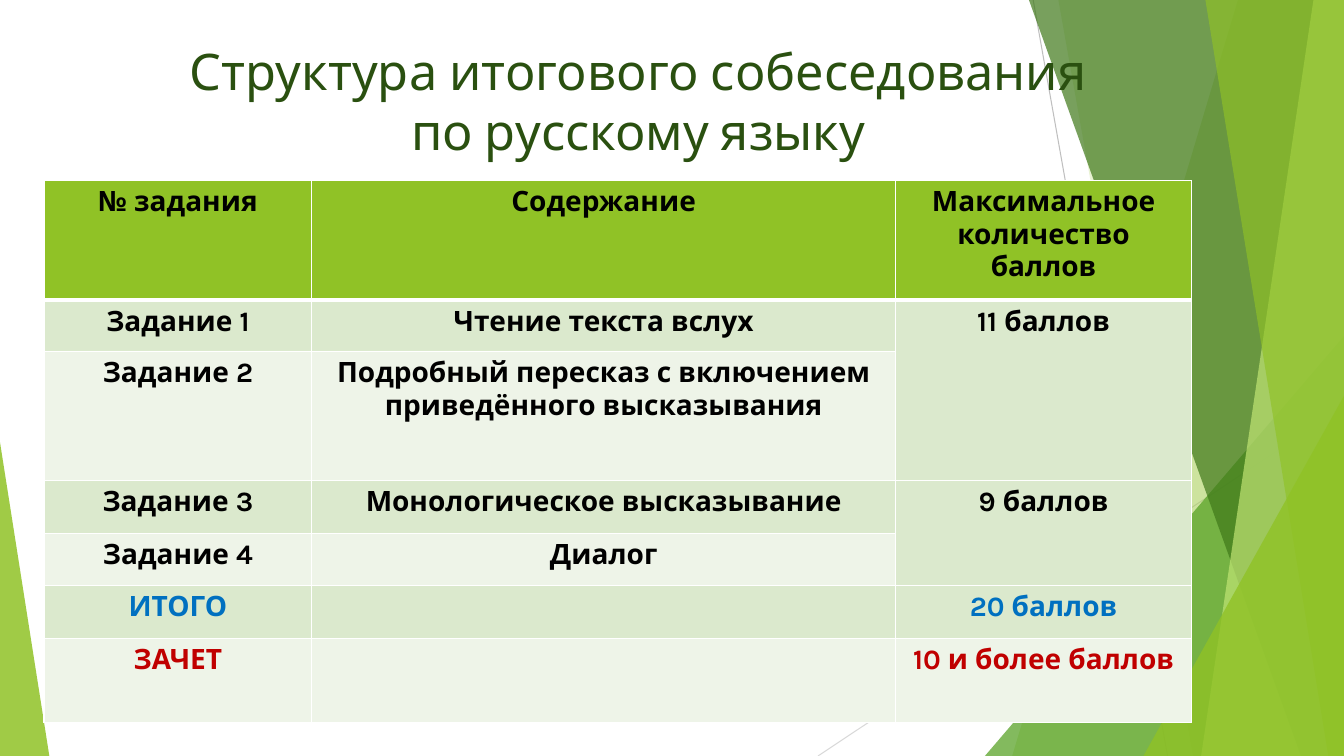
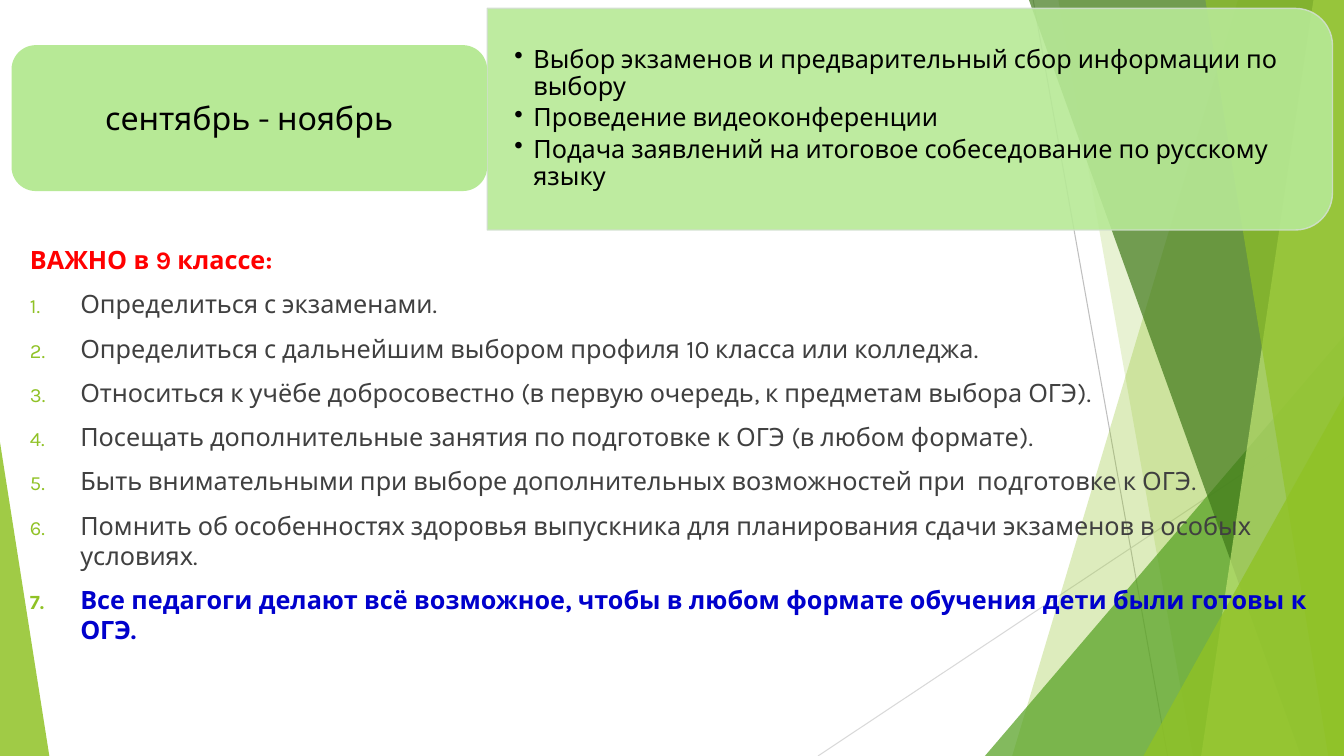
from dataclasses import dataclass
from typing import Optional, Union

from pptx import Presentation
from pptx.dml.color import RGBColor
from pptx.enum.shapes import MSO_CONNECTOR, MSO_SHAPE
from pptx.enum.text import MSO_ANCHOR, MSO_AUTO_SIZE, PP_ALIGN
from pptx.oxml.ns import qn
from pptx.oxml.xmlchemy import OxmlElement
from pptx.shapes.autoshape import Shape
from pptx.slide import Slide
from pptx.table import _Cell
from pptx.text.text import TextFrame, _Paragraph
from pptx.util import Emu, Pt

EMU_PER_PX = 9525
WIDTH, HEIGHT = 1280, 720


@dataclass(frozen=True)
class Theme:
    font: str = "Karla"
    white: str = "FFFFFF"
    black: str = "000000"
    text: str = "404040"
    title: str = "2A5010"
    lime: str = "90C226"
    grass: str = "54A021"
    forest: str = "3F7819"
    pale_lime: str = "C0E474"
    card: str = "B7E996"
    card_line: str = "D1DFCD"
    band_dark: str = "DBE9CD"
    band_light: str = "EEF4E8"
    ray_dark: str = "BFBFBF"
    ray_light: str = "D9D9D9"
    total: str = "0070C0"
    passed: str = "C00000"
    warning: str = "FF0000"
    emphasis: str = "0000CC"
    title_size: int = 36
    period_size: int = 23
    table_size: int = 20
    body_size: int = 18


THEME = Theme()


@dataclass(frozen=True)
class Box:
    left: int
    top: int
    width: int
    height: int

    def emu(self) -> tuple[Emu, ...]:
        return tuple(px(value) for value in (self.left, self.top, self.width, self.height))


@dataclass(frozen=True)
class Ray:
    start: tuple[int, int]
    end: tuple[int, int]
    color: str


@dataclass(frozen=True)
class Facet:
    top_x: int
    bottom_x: int
    color: str
    opacity: int


@dataclass(frozen=True)
class Wedge:
    box: Box
    apex: int
    color: str
    opacity: int


@dataclass(frozen=True)
class TableRow:
    height: int
    cells: tuple[Optional[str], ...]
    color: str = THEME.black


@dataclass(frozen=True)
class Advice:
    text: str
    color: str = THEME.text
    bold: bool = False


RAYS = (
    Ray((984, 0), (1112, HEIGHT), THEME.ray_dark),
    Ray((WIDTH, 387), (779, HEIGHT), THEME.ray_light),
)
BACKDROP: tuple[Union[Facet, Wedge], ...] = (
    Facet(1179, 964, THEME.lime, 30),
    Facet(1008, 1136, THEME.lime, 20),
    Wedge(Box(938, 320, 342, 400), 1, THEME.grass, 72),
    Facet(980, 1239, THEME.forest, 70),
    Facet(1251, 1144, THEME.pale_lime, 70),
    Facet(1148, 1265, THEME.lime, 65),
    Wedge(Box(1089, 377, 191, 343), 1, THEME.lime, 80),
    Wedge(Box(0, 421, 47, 299), 0, THEME.lime, 85),
)
COLUMN_WIDTHS = (255, 556, 282)
TABLE_ROWS = (
    TableRow(114, ("№ задания", "Содержание", "Максимальное количество баллов")),
    TableRow(49, ("Задание 1", "Чтение текста вслух", "11 баллов")),
    TableRow(123, ("Задание 2", "Подробный пересказ с включением приведённого высказывания", None)),
    TableRow(50, ("Задание 3", "Монологическое высказывание", "9 баллов")),
    TableRow(50, ("Задание 4", "Диалог", None)),
    TableRow(50, ("ИТОГО", "", "20 баллов"), THEME.total),
    TableRow(80, ("ЗАЧЕТ", "", "10 и более баллов"), THEME.passed),
)
AUTUMN_TASKS = (
    "Выбор экзаменов и предварительный сбор информации по выбору",
    "Проведение видеоконференции",
    "Подача заявлений на итоговое собеседование по русскому языку",
)
ADVICE_HEADING = Advice("ВАЖНО в 9 классе:", THEME.warning, True)
ADVICE = (
    Advice("Определиться с экзаменами."),
    Advice("Определиться с дальнейшим выбором профиля 10 класса или колледжа."),
    Advice("Относиться к учёбе добросовестно (в первую очередь, к предметам выбора ОГЭ)."),
    Advice("Посещать дополнительные занятия по подготовке к ОГЭ (в любом формате)."),
    Advice("Быть внимательными при выборе дополнительных возможностей при  подготовке к ОГЭ."),
    Advice("Помнить об особенностях здоровья выпускника для планирования сдачи экзаменов в особых условиях."),
    Advice("Все педагоги делают всё возможное, чтобы в любом формате обучения дети были готовы к ОГЭ.",
           THEME.emphasis, True),
)


def px(value: int) -> Emu:
    return Emu(value * EMU_PER_PX)


def rgb(color: str) -> RGBColor:
    return RGBColor.from_string(color)


def add_child(parent, tag: str, **attributes: str):
    child = OxmlElement(tag)
    for name, value in attributes.items():
        child.set(name, value)
    parent.append(child)
    return child


def paint(shape: Shape, color: str, opacity: int = 100, line: Optional[str] = None) -> None:
    shape.shadow.inherit = False
    shape.fill.solid()
    shape.fill.fore_color.rgb = rgb(color)
    if line:
        shape.line.color.rgb = rgb(line)
        shape.line.width = Pt(1)
    else:
        shape.line.fill.background()
    if opacity < 100:
        for paint_color in shape._element.spPr.iter(qn("a:srgbClr")):
            add_child(paint_color, "a:alpha", val=str(opacity * 1000))


def style(paragraph: _Paragraph, size: int, color: str, bold: bool = False) -> None:
    paragraph.font.name = THEME.font
    paragraph.font.size = Pt(size)
    paragraph.font.bold = bold
    paragraph.font.color.rgb = rgb(color)


def next_paragraph(frame: TextFrame, index: int) -> _Paragraph:
    return frame.add_paragraph() if index else frame.paragraphs[0]


def indent(paragraph: _Paragraph, hanging: int):
    properties = paragraph._p.get_or_add_pPr()
    properties.set("marL", str(px(hanging)))
    properties.set("indent", str(-px(hanging)))
    return properties


def add_text_frame(slide: Slide, box: Box) -> TextFrame:
    frame = slide.shapes.add_textbox(*box.emu()).text_frame
    frame.word_wrap = True
    return frame


def draw_backdrop(slide: Slide) -> None:
    for ray in RAYS:
        points = [px(value) for value in ray.start + ray.end]
        connector = slide.shapes.add_connector(MSO_CONNECTOR.STRAIGHT, *points)
        connector.line.color.rgb = rgb(ray.color)
        connector.line.width = Pt(0.75)
        add_child(connector._element.spPr, "a:effectLst")
    for part in BACKDROP:
        if isinstance(part, Facet):
            builder = slide.shapes.build_freeform(part.top_x, 0, scale=EMU_PER_PX)
            builder.add_line_segments([(WIDTH, 0), (WIDTH, HEIGHT), (part.bottom_x, HEIGHT)])
            shape = builder.convert_to_shape()
        else:
            shape = slide.shapes.add_shape(MSO_SHAPE.ISOSCELES_TRIANGLE, *part.box.emu())
            shape.adjustments[0] = part.apex
        paint(shape, part.color, part.opacity)


def place_title(slide: Slide, text: str, box: Box) -> None:
    title = slide.shapes.title
    title.left, title.top, title.width, title.height = box.emu()
    slide.shapes._spTree.append(title._element)
    frame = title.text_frame
    frame.text = text
    frame.word_wrap = True
    frame.auto_size = MSO_AUTO_SIZE.NONE
    frame.vertical_anchor = MSO_ANCHOR.TOP
    frame.paragraphs[0].alignment = PP_ALIGN.CENTER
    style(frame.paragraphs[0], THEME.title_size, THEME.title)


def draw_borders(cell: _Cell, row: int) -> None:
    properties = cell._tc.get_or_add_tcPr()
    widths = {"L": 1, "R": 1, "T": 3 if row == 1 else 1, "B": 3 if row == 0 else 1}
    for position, (side, width) in enumerate(widths.items()):
        border = OxmlElement(f"a:ln{side}")
        border.set("w", str(Pt(width)))
        add_child(add_child(border, "a:solidFill"), "a:srgbClr", val=THEME.white)
        properties.insert(position, border)


def draw_score_table(slide: Slide, left: int, top: int) -> None:
    box = Box(left, top, sum(COLUMN_WIDTHS), sum(row.height for row in TABLE_ROWS))
    table = slide.shapes.add_table(len(TABLE_ROWS), len(COLUMN_WIDTHS), *box.emu()).table
    for column, width in zip(table.columns, COLUMN_WIDTHS):
        column.width = px(width)
    for row_index, row in enumerate(TABLE_ROWS):
        table.rows[row_index].height = px(row.height)
        band = THEME.band_dark if row_index % 2 else THEME.band_light
        for column_index, text in enumerate(row.cells):
            cell = table.cell(row_index, column_index)
            cell.fill.solid()
            cell.fill.fore_color.rgb = rgb(band if row_index else THEME.lime)
            draw_borders(cell, row_index)
            if text is None:
                table.cell(row_index - 1, column_index).merge(cell)
            elif text:
                cell.text = text
                paragraph = cell.text_frame.paragraphs[0]
                paragraph.alignment = PP_ALIGN.CENTER
                style(paragraph, THEME.table_size, row.color, True)


def draw_autumn_plan(slide: Slide) -> None:
    panel = slide.shapes.add_shape(MSO_SHAPE.ROUND_2_SAME_RECTANGLE, *Box(761, -289, 211, 805).emu())
    panel.rotation = 90
    paint(panel, THEME.card, 90, THEME.card_line)
    frame = add_text_frame(slide, Box(464, 18, 795, 190))
    frame.vertical_anchor = MSO_ANCHOR.MIDDLE
    frame.margin_left = frame.margin_right = px(26)
    frame.margin_top = frame.margin_bottom = px(13)
    for index, task in enumerate(AUTUMN_TASKS):
        paragraph = next_paragraph(frame, index)
        paragraph.text = task
        paragraph.line_spacing = 0.9
        paragraph.space_after = Pt(3)
        add_child(indent(paragraph, 18), "a:buChar", char="•")
        style(paragraph, THEME.body_size, THEME.black)

    period = slide.shapes.add_shape(MSO_SHAPE.ROUNDED_RECTANGLE, *Box(11, 43, 453, 139).emu())
    paint(period, THEME.card)
    period.text_frame.text = "сентябрь - ноябрь"
    paragraph = period.text_frame.paragraphs[0]
    paragraph.alignment = PP_ALIGN.CENTER
    style(paragraph, THEME.period_size, THEME.black)


def draw_advice(slide: Slide) -> None:
    frame = add_text_frame(slide, Box(19, 228, 1241, 485))
    for index, advice in enumerate((ADVICE_HEADING, *ADVICE)):
        paragraph = next_paragraph(frame, index)
        paragraph.text = advice.text
        if index:
            paragraph.space_before = Pt(10)
            properties = indent(paragraph, 48)
            add_child(add_child(properties, "a:buClr"), "a:srgbClr", val=THEME.lime)
            add_child(properties, "a:buSzPct", val="80000")
            add_child(properties, "a:buAutoNum", type="arabicPeriod")
        style(paragraph, THEME.body_size, advice.color, advice.bold)


def main() -> None:
    presentation = Presentation()
    presentation.slide_width, presentation.slide_height = px(WIDTH), px(HEIGHT)
    title_only, blank = presentation.slide_layouts[5], presentation.slide_layouts[6]

    structure = presentation.slides.add_slide(title_only)
    draw_backdrop(structure)
    place_title(structure, "Структура итогового собеседования по русскому языку", Box(157, 33, 902, 138))
    draw_score_table(structure, 42, 172)

    calendar = presentation.slides.add_slide(blank)
    draw_backdrop(calendar)
    draw_autumn_plan(calendar)
    draw_advice(calendar)

    presentation.save("out.pptx")


if __name__ == "__main__":
    main()
